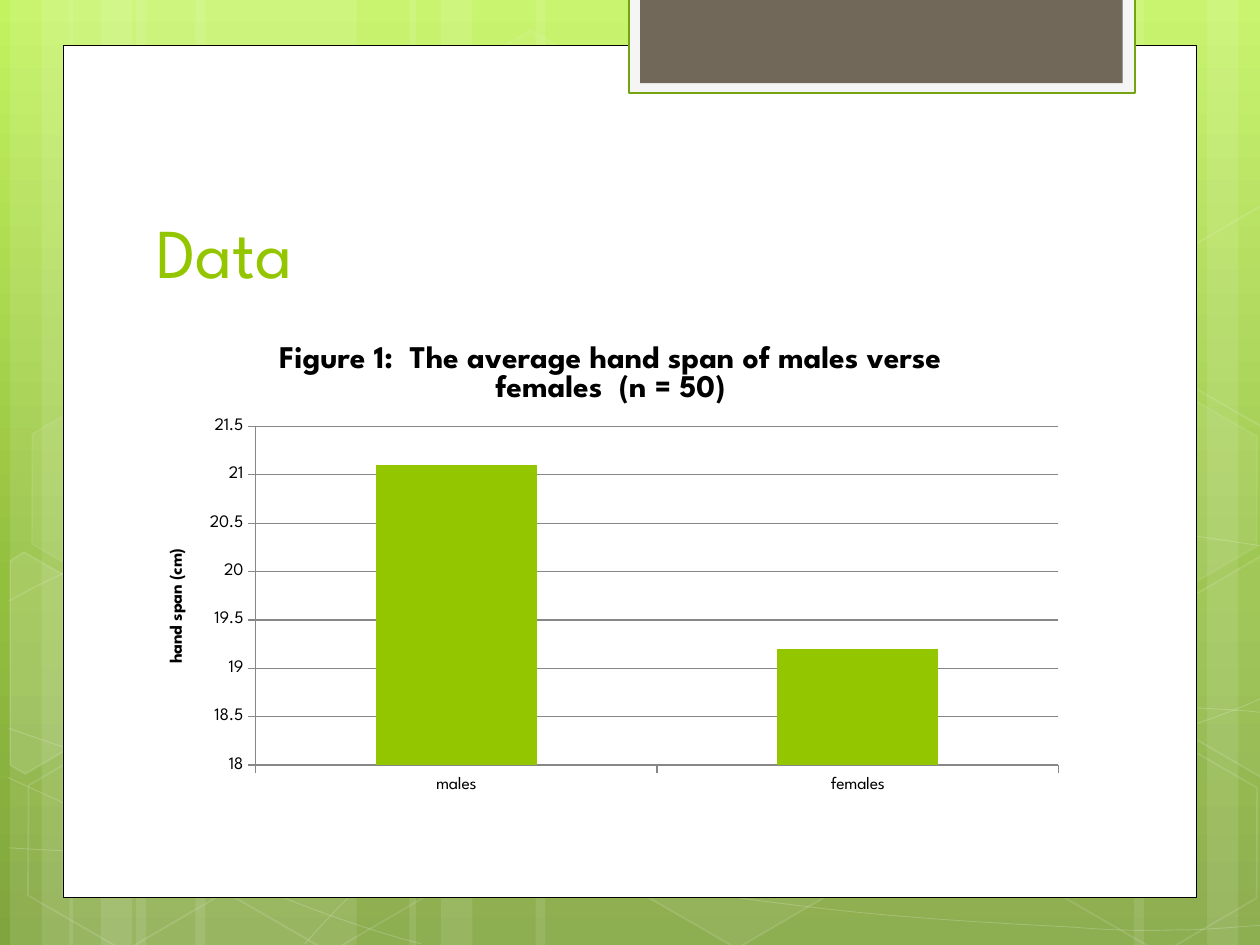
from copy import deepcopy
from math import cos, radians, sin
from typing import NamedTuple, Optional

from lxml import etree
from pptx import Presentation
from pptx.chart.data import CategoryChartData
from pptx.dml.color import RGBColor
from pptx.enum.chart import XL_CHART_TYPE, XL_TICK_MARK
from pptx.enum.shapes import MSO_SHAPE
from pptx.enum.text import MSO_ANCHOR, PP_ALIGN
from pptx.oxml.ns import qn
from pptx.util import Inches, Pt

RECTANGLE, HEXAGON = MSO_SHAPE.RECTANGLE, MSO_SHAPE.HEXAGON
COLUMNS, OUTSIDE = XL_CHART_TYPE.COLUMN_CLUSTERED, XL_TICK_MARK.OUTSIDE
BOTTOM, LEFT = MSO_ANCHOR.BOTTOM, PP_ALIGN.LEFT

FONT = "League Spartan"
WHITE = RGBColor(0xFF, 0xFF, 0xFF)
BLACK = RGBColor(0, 0, 0)
GREEN = RGBColor(0x94, 0xC6, 0x00)
DARK_GREEN = RGBColor(0x74, 0xA5, 0x10)
PALE_GRAY = RGBColor(0xF5, 0xF5, 0xF5)
BROWN = RGBColor(0x71, 0x68, 0x5A)
AXIS_GRAY = RGBColor(0x87, 0x87, 0x87)
BACKDROP = [(0, RGBColor(0xC3, 0xF3, 0x5F)),
            (0.62, RGBColor(0x93, 0xBF, 0x3F)),
            (1, RGBColor(0x81, 0xA5, 0x3E))]
TILT = 30
PLOT_AREA = {"x": 0.12, "y": 0.22, "w": 0.86, "h": 0.7}


class Paint(NamedTuple):
    fill: Optional[RGBColor] = None
    fill_alpha: int = 100
    line: Optional[RGBColor] = None
    width: float = 1
    line_alpha: int = 100


class Panel(NamedTuple):
    left: float
    top: float
    width: float
    height: float
    paint: Paint


class Hexagon(NamedTuple):
    left: float
    top: float
    fill_alpha: int
    line_alpha: int


class CutHexagon(NamedTuple):
    """A hexagon trimmed by the slide's edge, turned about its center."""
    center: tuple
    points: list
    fill_alpha: int


STRIPES = [(1.08, 1.75), (0.08, 0.5), (0.33, 0.83), (1.55, 1.75),
           (0.55, 0.5), (0.8, 0.83), (7.33, 1.75), (9.58, 0.5),
           (9, 0.83), (4.25, 3.08), (3.25, 0.5), (3.5, 0.83)]

# A start point, then per segment: two control points and an end, or an end alone.
WAVES = [
    [(0.07, 6.73), (0.61, 6.76, 1.15, 6.79, 1.9, 6.78), (2.65, 6.77, 3.58, 6.75, 4.58, 6.65),
     (5.58, 6.55, 7, 6.36, 7.92, 6.17), (8.83, 5.98, 9.77, 5.68, 10.07, 5.51)],
    [(0.07, 4.77), (0.36, 4.61, 0.65, 4.46, 1.21, 4.31), (1.78, 4.16, 2.59, 3.94, 3.47, 3.87),
     (4.36, 3.8, 5.44, 3.79, 6.54, 3.87), (7.64, 3.95, 9.47, 4.26, 10.07, 4.34)],
    [(0.06, 6.17), (1.27, 6.72, 2.47, 7.27, 3.34, 7.49)],
    [(0.07, 5.78), (0.38, 5.89, 0.7, 6, 1.28, 6.16), (1.86, 6.31, 2.73, 6.56, 3.57, 6.73),
     (4.4, 6.9, 5.45, 7.08, 6.28, 7.18), (7.11, 7.29, 8, 7.33, 8.53, 7.36),
     (9.05, 7.4, 9.19, 7.38, 9.45, 7.38), (9.71, 7.37, 9.89, 7.35, 10.07, 7.34)],
    [(2.42, 7.49), (2.6, 7.29, 2.78, 7.09, 3.02, 6.91), (3.26, 6.73, 3.6, 6.53, 3.88, 6.39),
     (4.16, 6.25, 4.33, 6.19, 4.7, 6.09), (5.06, 5.99, 5.73, 5.85, 6.08, 5.78),
     (6.44, 5.71, 6.49, 5.71, 6.8, 5.69), (7.11, 5.66, 7.6, 5.63, 7.94, 5.62),
     (8.29, 5.61, 8.86, 5.62, 8.86, 5.62), (9.53, 5.62),
     (9.71, 5.63, 9.88, 5.64, 9.97, 5.65), (10.06, 5.66, 10.03, 5.65, 10.06, 5.66)],
]
HEXAGONS = [Hexagon(3.34, 0.36, 4, 8), Hexagon(4.97, 5.89, 6, 12),
            Hexagon(0.11, 5.91, 0, 12), Hexagon(0.14, 3.12, 7, 8),
            Hexagon(1.74, 5.92, 0, 12), Hexagon(7.53, 4.53, 10, 12),
            Hexagon(8.34, 5.93, 0, 12), Hexagon(8.34, 3.14, 7, 8)]
CUT_HEXAGONS = [
    CutHexagon((0.36, 5.35), [(0.08, 4.45), (0.19, 4.38), (0.96, 4.82), (0.95, 5.7),
                              (0.2, 6.14), (0.08, 6.07)], 10),
    CutHexagon((9.85, 5.2), [(9.26, 4.85), (10.01, 4.41), (10.09, 4.46), (10.09, 6.13),
                             (10.02, 6.17), (9.26, 5.73)], 4),
    CutHexagon((9.85, 2.41), [(9.26, 2.07), (10.01, 1.63), (10.1, 1.68), (10.09, 3.35),
                              (10.02, 3.39), (9.26, 2.95)], 0),
]
PANELS = [Panel(0.5, 0.36, 9, 6.76, Paint(WHITE, line=BLACK, width=0.5)),
          Panel(4.99, -0.02, 4.02, 0.76, Paint(PALE_GRAY, line=DARK_GREEN, width=1.25)),
          Panel(5.08, -0.02, 3.83, 0.68, Paint(BROWN))]


def set_color(fill, color: RGBColor, alpha: int = 100) -> None:
    fill.solid()
    fill.fore_color.rgb = color
    if alpha < 100:
        node = fill._xPr.find(qn("a:solidFill"))[0]
        etree.SubElement(node, qn("a:alpha"), val=str(alpha * 1000))


def apply_paint(shape, paint: Paint) -> None:
    shape.shadow.inherit = False
    if paint.fill is None or paint.fill_alpha == 0:
        shape.fill.background()
    else:
        set_color(shape.fill, paint.fill, paint.fill_alpha)
    if paint.line is None:
        shape.line.fill.background()
    else:
        shape.line.width = Pt(paint.width)
        set_color(shape.line.fill, paint.line, paint.line_alpha)


def draw_panel(page, panel: Panel, kind=RECTANGLE):
    shape = page.shapes.add_shape(kind, *(Inches(v) for v in panel[:4]))
    apply_paint(shape, panel.paint)
    return shape


def draw_hexagon(page, item: Hexagon) -> None:
    paint = Paint(WHITE, item.fill_alpha, WHITE, 1, item.line_alpha)
    shape = draw_panel(page, Panel(item.left, item.top, 1.75, 1.52, paint), HEXAGON)
    shape.adjustments[0] = 0.285
    shape.rotation = TILT


def draw_outline(page, points: list, paint: Paint, close: bool):
    corners = [(Inches(x), Inches(y)) for x, y in points]
    builder = page.shapes.build_freeform(*corners[0])
    builder.add_line_segments(corners[1:], close=close)
    shape = builder.convert_to_shape()
    apply_paint(shape, paint)
    return shape


def draw_wave(page, wave: list) -> None:
    """Join the segment ends, then bend each segment that has control points."""
    shape = draw_outline(page, [segment[-2:] for segment in wave],
                         Paint(None, 0, WHITE, 0.5, 20), False)
    for line, segment in zip(list(shape.element.iter(qn("a:lnTo"))), wave[1:]):
        if len(segment) == 6:
            line.tag = qn("a:cubicBezTo")
            controls = zip(segment[0:4:2], segment[1:4:2])
            for index, (x, y) in enumerate(controls):
                point = etree.Element(qn("a:pt"), x=str(Inches(x) - shape.left),
                                      y=str(Inches(y) - shape.top))
                line.insert(index, point)


def draw_cut_hexagon(page, item: CutHexagon) -> None:
    center_x, center_y = item.center
    cosine, sine = cos(radians(TILT)), sin(radians(TILT))
    upright = []
    for x, y in item.points + item.points[:1]:
        dx, dy = x - center_x, y - center_y
        upright.append((center_x + dx * cosine + dy * sine,
                        center_y - dx * sine + dy * cosine))
    paint = Paint(WHITE, item.fill_alpha, WHITE, 1, 12)
    draw_outline(page, upright, paint, True).rotation = TILT


def fill_background(page) -> None:
    fill = page.background.fill
    fill.gradient()
    fill.gradient_angle = 270
    stops = next(page.element.iter(qn("a:gsLst")))
    stops.append(deepcopy(stops[-1]))
    for stop, (position, color) in zip(fill.gradient_stops, BACKDROP):
        stop.position = position
        stop.color.rgb = color


def format_font(font, size: float, color: RGBColor, bold: bool = False) -> None:
    font.name, font.size, font.bold = FONT, Pt(size), bold
    font.color.rgb = color


def add_title(page) -> None:
    title = page.shapes.title
    title.left, title.top = Inches(1.14), Inches(1.12)
    title.width, title.height = Inches(7.68), Inches(1.25)
    frame = title.text_frame
    frame.text = "Data"
    frame.vertical_anchor = BOTTOM
    frame.paragraphs[0].alignment = LEFT
    format_font(frame.paragraphs[0].runs[0].font, 40, GREEN)
    title.element.getparent().append(title.element)


def place_plot_area(chart) -> None:
    area = next(chart.element.iter(qn("c:plotArea")))
    for old in area.findall(qn("c:layout")):
        area.remove(old)
    layout = etree.Element(qn("c:layout"))
    area.insert(0, layout)
    manual = etree.SubElement(layout, qn("c:manualLayout"))
    settings = {"layoutTarget": "inner", "xMode": "edge", "yMode": "edge", **PLOT_AREA}
    for name, value in settings.items():
        etree.SubElement(manual, qn("c:" + name), val=str(value))


def add_hand_span_chart(page) -> None:
    data = CategoryChartData()
    data.categories = ["males", "females"]
    data.add_series("Series 1", [21.1, 19.2])
    chart = page.shapes.add_chart(COLUMNS, Inches(1.14), Inches(2.54),
                                  Inches(7.41), Inches(3.84), data).chart
    format_font(chart.font, 10, BLACK)
    chart.has_legend = False
    values, groups = chart.value_axis, chart.category_axis
    values.minimum_scale, values.maximum_scale, values.major_unit = 18, 21.5, 0.5
    chart.chart_title.text_frame.text = (
        "Figure 1:  The average hand span of males verse females  (n = 50)")
    values.axis_title.text_frame.text = "hand span (cm)"
    for title, size in ((chart.chart_title, 18), (values.axis_title, 10)):
        para = title.text_frame.paragraphs[0]
        for font in (para.font, para.runs[0].font):
            format_font(font, size, BLACK, True)
    for axis in (values, groups):
        axis.major_tick_mark = OUTSIDE
        axis.format.line.color.rgb = AXIS_GRAY
    values.major_gridlines.format.line.color.rgb = AXIS_GRAY
    plot = chart.plots[0]
    plot.gap_width = 150
    plot.vary_by_categories = False
    set_color(plot.series[0].format.fill, GREEN)
    place_plot_area(chart)


def main() -> None:
    deck = Presentation()
    deck.slide_width, deck.slide_height = Inches(10), Inches(7.5)
    page = deck.slides.add_slide(deck.slide_layouts[5])
    fill_background(page)
    for left, width in STRIPES:
        draw_panel(page, Panel(left, 0, width, 7.5, Paint(WHITE, 10)))
    for wave in WAVES:
        draw_wave(page, wave)
    for item in HEXAGONS:
        draw_hexagon(page, item)
    for item in CUT_HEXAGONS:
        draw_cut_hexagon(page, item)
    for panel in PANELS:
        draw_panel(page, panel)
    add_title(page)
    add_hand_span_chart(page)
    deck.save("out.pptx")


if __name__ == "__main__":
    main()
